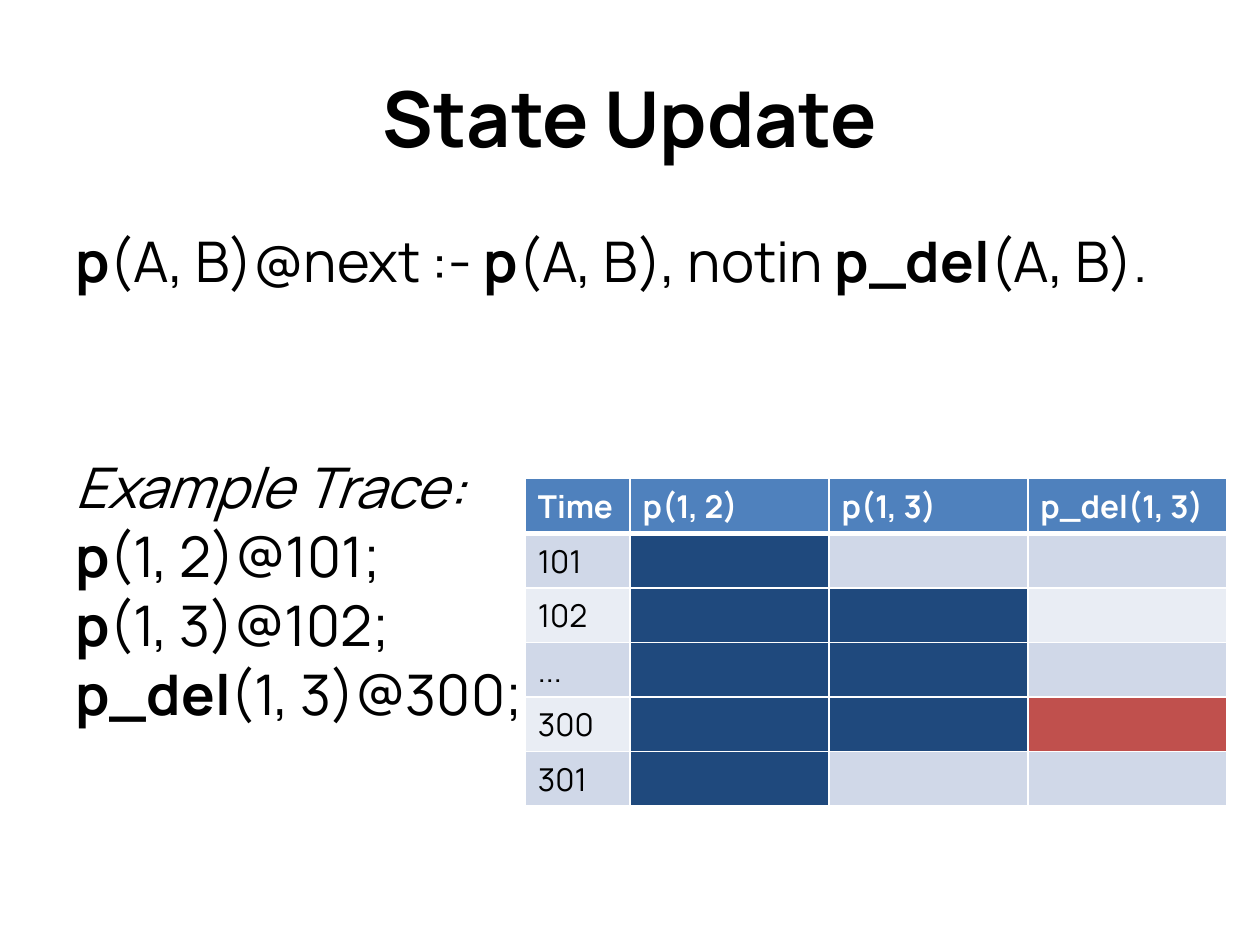
from dataclasses import dataclass
from typing import NamedTuple

from lxml.etree import SubElement
from pptx import Presentation
from pptx.dml.color import RGBColor
from pptx.enum.text import MSO_ANCHOR, PP_ALIGN
from pptx.oxml.ns import qn
from pptx.util import Cm, Pt


@dataclass(frozen=True)
class Theme:
    font: str = "Manrope"
    title_size: float = 44
    body_size: float = 32
    table_size: float = 18
    text: str = "000000"
    light: str = "FFFFFF"
    header: str = "4F81BD"
    bands: tuple = ("D0D8E8", "E9EDF4")
    present: str = "1F497D"
    deleted: str = "C0504D"


class Span(NamedTuple):
    text: str
    bold: bool = False
    italic: bool = False


class Line(NamedTuple):
    spans: list[Span]
    space_before: float = 1


class Area(NamedTuple):
    left: float
    top: float
    width: float
    height: float

    def lengths(self) -> list:
        return [Cm(value) for value in self]


class TraceRow(NamedTuple):
    time: str
    marks: tuple  # one fill per fact, None for the plain band


THEME = Theme()

# Content
TITLE = Line([Span("State Update", bold=True)], 0)
RULE_AND_TRACE = [
    Line([Span("p", True), Span("(A, B)@next :- "), Span("p", True),
          Span("(A, B), notin "), Span("p_del", True), Span("(A, B).")]),
    Line([Span("Example Trace:", italic=True)], 90.5),
    Line([Span("p", True), Span("(1, 2)@101;")]),
    Line([Span("p", True), Span("(1, 3)@102;")]),
    Line([Span("p_del", True), Span("(1, 3)@300;")]),
]
HEADINGS = ["Time", "p(1, 2)", "p(1, 3)", "p_del(1, 3)"]
TIMELINE = [
    TraceRow("101", (THEME.present, None, None)),
    TraceRow("102", (THEME.present, THEME.present, None)),
    TraceRow("...", (THEME.present, THEME.present, None)),
    TraceRow("300", (THEME.present, THEME.present, THEME.deleted)),
    TraceRow("301", (THEME.present, None, None)),
]

# Layout in centimetres
TITLE_AREA = Area(1.27, 0.76, 22.86, 3.18)
BODY_AREA = Area(1.27, 4.45, 22.86, 12.57)
TABLE_AREA = Area(10.59, 9.65, 14.14, 6.6)
TIME_WIDTH, FACT_WIDTH = 2.11, 4.01


def write_span(paragraph, span: Span, size: float, color: str) -> None:
    run = paragraph.add_run()
    run.text = span.text
    formats = {"name": THEME.font, "size": Pt(size),
               "bold": span.bold, "italic": span.italic}
    for attribute, value in formats.items():
        setattr(run.font, attribute, value)
    run.font.color.rgb = RGBColor.from_string(color)


def write_block(slide, area: Area, lines: list[Line], size: float,
                anchor=MSO_ANCHOR.TOP, align=PP_ALIGN.LEFT) -> None:
    frame = slide.shapes.add_textbox(*area.lengths()).text_frame
    frame.word_wrap = True
    frame.vertical_anchor = anchor
    for index, line in enumerate(lines):
        paragraph = frame.add_paragraph() if index else frame.paragraphs[0]
        paragraph.alignment = align
        paragraph.space_before = Pt(line.space_before)
        for span in line.spans:
            write_span(paragraph, span, size, THEME.text)


def style_cell(cell, fill: str, top: float = 1, bottom: float = 1) -> None:
    properties = cell._tc.get_or_add_tcPr()
    widths = {"a:lnL": 1, "a:lnR": 1, "a:lnT": top, "a:lnB": bottom}
    for side, width in widths.items():
        border = SubElement(properties, qn(side), w=str(Pt(width)))
        solid = SubElement(border, qn("a:solidFill"))
        SubElement(solid, qn("a:srgbClr"), val=THEME.light)
    cell.fill.solid()
    cell.fill.fore_color.rgb = RGBColor.from_string(fill)


def draw_timeline(slide) -> None:
    table = slide.shapes.add_table(
        len(TIMELINE) + 1, len(HEADINGS), *TABLE_AREA.lengths()).table
    for index, column in enumerate(table.columns):
        column.width = Cm(FACT_WIDTH if index else TIME_WIDTH)

    # Header row
    for index, heading in enumerate(HEADINGS):
        cell = table.cell(0, index)
        style_cell(cell, THEME.header, bottom=3)
        write_span(cell.text_frame.paragraphs[0], Span(heading, True),
                   THEME.table_size, THEME.light)

    # One row per time step
    for number, step in enumerate(TIMELINE, start=1):
        band = THEME.bands[(number - 1) % 2]
        for index, mark in enumerate((None, *step.marks)):
            style_cell(table.cell(number, index), mark or band,
                       top=3 if number == 1 else 1)
        write_span(table.cell(number, 0).text_frame.paragraphs[0],
                   Span(step.time), THEME.table_size, THEME.text)


def main() -> None:
    deck = Presentation()
    deck.slide_width, deck.slide_height = Cm(25.4), Cm(19.05)
    slide = deck.slides.add_slide(deck.slide_layouts[6])
    write_block(slide, TITLE_AREA, [TITLE], THEME.title_size,
                MSO_ANCHOR.MIDDLE, PP_ALIGN.CENTER)
    write_block(slide, BODY_AREA, RULE_AND_TRACE, THEME.body_size)
    draw_timeline(slide)
    deck.save("out.pptx")


if __name__ == "__main__":
    main()
